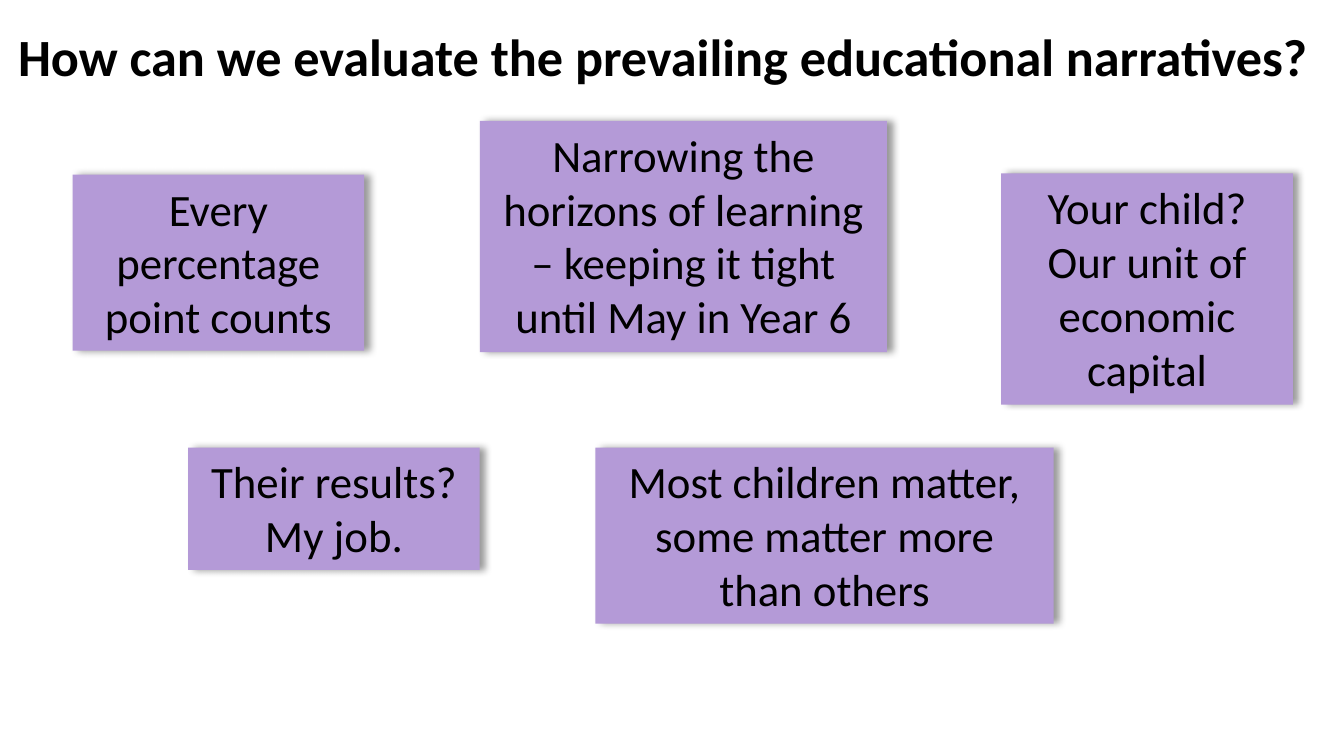
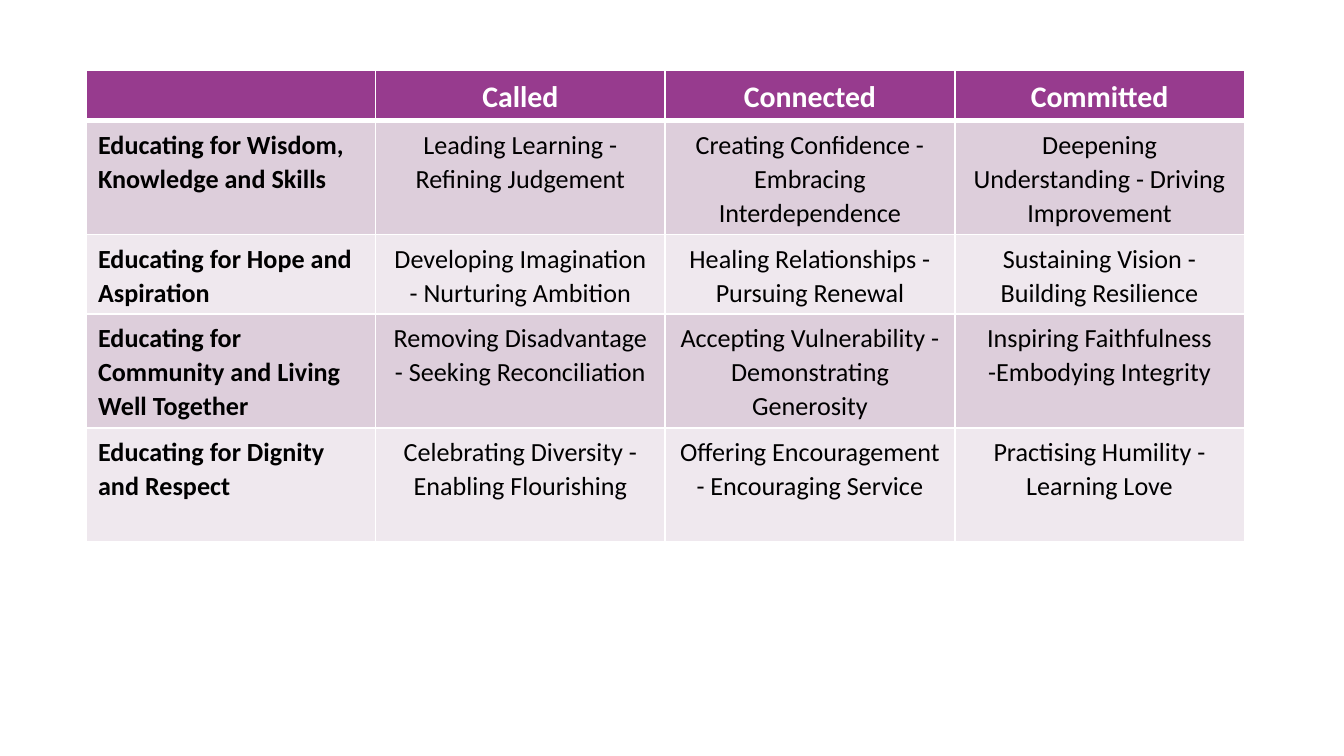
"""Build two slides on educational narratives and leadership themes."""
import lxml.etree
import pptx
import pptx.dml.color
import pptx.enum.shapes
import pptx.enum.text
import pptx.oxml.ns
import pptx.util

Inches = pptx.util.Inches
Pt = pptx.util.Pt
ALIGN = pptx.enum.text.PP_ALIGN
qn = pptx.oxml.ns.qn

COLORS = {
    "black": "000000",
    "white": "FFFFFF",
    "card": "B49AD7",
    "header": "973B8E",
    "band_dark": "DDCEDB",
    "band_light": "EFE8EE",
}
TITLE = {"size": Pt(28), "bold": True}
CARD = {"size": Pt(24), "bold": False}
HEADER = {"size": Pt(16), "bold": True}
ROW_LABEL = {"size": Pt(14), "bold": True}
BODY = {"size": Pt(14), "bold": False}
MARGINS = {
    "margin_left": Inches(0.09),
    "margin_right": Inches(0.09),
    "margin_top": Inches(0.05),
    "margin_bottom": Inches(0.04),
}

CARDS = [
    ("Every percentage point counts", 0.54, 1.3, 2.17, 1.31),
    ("Most children matter, some matter more than others", 4.43, 3.33, 3.41, 1.31),
    ("Narrowing the horizons of learning – keeping it tight until May in Year 6",
     3.57, 0.9, 3.03, 1.72),
    ("Their results? My job.", 1.4, 3.33, 2.17, 0.91),
    ("Your child? Our unit of economic capital", 7.45, 1.29, 2.17, 1.72),
]
THEMES = [
    ["", "Called", "Connected", "Committed"],
    ["Educating for Wisdom, Knowledge and Skills",
     "Leading Learning - Refining Judgement",
     "Creating Confidence - Embracing Interdependence",
     "Deepening Understanding - Driving Improvement"],
    ["Educating for Hope and Aspiration",
     "Developing Imagination - Nurturing Ambition",
     "Healing Relationships - Pursuing Renewal",
     "Sustaining Vision - Building Resilience"],
    ["Educating for Community and Living Well Together",
     "Removing Disadvantage - Seeking Reconciliation",
     "Accepting Vulnerability - Demonstrating Generosity",
     "Inspiring Faithfulness -Embodying Integrity"],
    ["Educating for Dignity and Respect",
     "Celebrating Diversity - Enabling Flourishing",
     "Offering Encouragement - Encouraging Service",
     "Practising Humility - Learning Love"],
]
ROW_HEIGHTS = [0.37, 0.85, 0.59, 0.85, 0.85]


def rgb(name):
    """Return the named colour."""
    return pptx.dml.color.RGBColor.from_string(COLORS[name])


def apply(obj, values):
    """Set each attribute of obj from a dict."""
    for name, value in values.items():
        setattr(obj, name, value)


def fill(obj, color):
    """Give a shape or cell a solid fill."""
    obj.fill.solid()
    obj.fill.fore_color.rgb = rgb(color)


def write(tf, text, fmt, align, color="black", spacing=1.0):
    """Write one paragraph into a text frame."""
    p = tf.paragraphs[0]
    apply(p, {"alignment": align, "line_spacing": spacing})
    r = p.add_run()
    r.text = text
    apply(r.font, {"name": "Calibri", **fmt})
    r.font.color.rgb = rgb(color)


def add_shadow(sp):
    """Cast a soft grey shadow to the right of a shape."""
    sp.shadow.inherit = False
    effects = sp._element.spPr.find(qn("a:effectLst"))
    shadow = lxml.etree.SubElement(
        effects, qn("a:outerShdw"), blurRad=str(Pt(4)), dist=str(Pt(3)),
        dir="0", algn="l", rotWithShape="0")
    color = lxml.etree.SubElement(shadow, qn("a:srgbClr"), val=COLORS["black"])
    lxml.etree.SubElement(color, qn("a:alpha"), val="40000")


def add_title(s, text):
    """Add the slide heading."""
    sp = s.shapes.add_textbox(Inches(0), Inches(0.13), Inches(9.82), Inches(1.04))
    sp.text_frame.word_wrap = True
    write(sp.text_frame, text, TITLE, ALIGN.RIGHT)


def add_card(s, text, *box):
    """Add a shadowed card holding one statement."""
    sp = s.shapes.add_shape(pptx.enum.shapes.MSO_SHAPE.RECTANGLE, *map(Inches, box))
    fill(sp, "card")
    sp.line.fill.background()
    add_shadow(sp)
    tf = sp.text_frame
    apply(tf, {
        "word_wrap": True,
        "vertical_anchor": pptx.enum.text.MSO_ANCHOR.TOP,
        "auto_size": pptx.enum.text.MSO_AUTO_SIZE.SHAPE_TO_FIT_TEXT,
    })
    write(tf, text, CARD, ALIGN.CENTER)


def add_borders(cell, row):
    """Draw white cell borders, thicker below the header row."""
    widths = {"L": 1, "R": 1, "T": 3 if row == 1 else 1, "B": 3 if row == 0 else 1}
    tcPr = cell._tc.get_or_add_tcPr()
    for side, width in widths.items():
        ln = lxml.etree.SubElement(tcPr, qn(f"a:ln{side}"), w=str(Pt(width)))
        solid = lxml.etree.SubElement(ln, qn("a:solidFill"))
        lxml.etree.SubElement(solid, qn("a:srgbClr"), val=COLORS["white"])


def format_cell(cell, text, row, col):
    """Style and fill one cell according to its place in the table."""
    add_borders(cell, row)
    if row == 0:
        fmt, band, color = HEADER, "header", "white"
    else:
        fmt = BODY if col else ROW_LABEL
        band, color = "band_dark" if row % 2 else "band_light", "black"
    fill(cell, band)
    if text:
        apply(cell, MARGINS)
        write(cell.text_frame, text, fmt, ALIGN.CENTER if col else ALIGN.LEFT, color, 1.07)
    else:
        apply(cell, {"margin_top": 0, "margin_bottom": 0})


def add_theme_table(s):
    """Add the table of leadership themes."""
    width = Inches(8.62)
    table = s.shapes.add_table(
        len(THEMES), len(THEMES[0]), Inches(0.64), Inches(0.52),
        width, Inches(sum(ROW_HEIGHTS))).table
    for column in table.columns:
        column.width = width // len(THEMES[0])
    for row, (texts, height) in enumerate(zip(THEMES, ROW_HEIGHTS)):
        table.rows[row].height = Inches(height)
        for col, text in enumerate(texts):
            format_cell(table.cell(row, col), text, row, col)


def add_slide(prs):
    """Add a blank white slide."""
    s = prs.slides.add_slide(prs.slide_layouts[6])
    fill(s.background, "white")
    return s


def main():
    """Build and save the presentation."""
    prs = pptx.Presentation()
    apply(prs, {"slide_width": Inches(10), "slide_height": Inches(10) * 9 // 16})

    s = add_slide(prs)
    add_title(s, "How can we evaluate the prevailing educational narratives?")
    for card in CARDS:
        add_card(s, *card)

    add_theme_table(add_slide(prs))
    prs.save("out.pptx")


if __name__ == "__main__":
    main()
